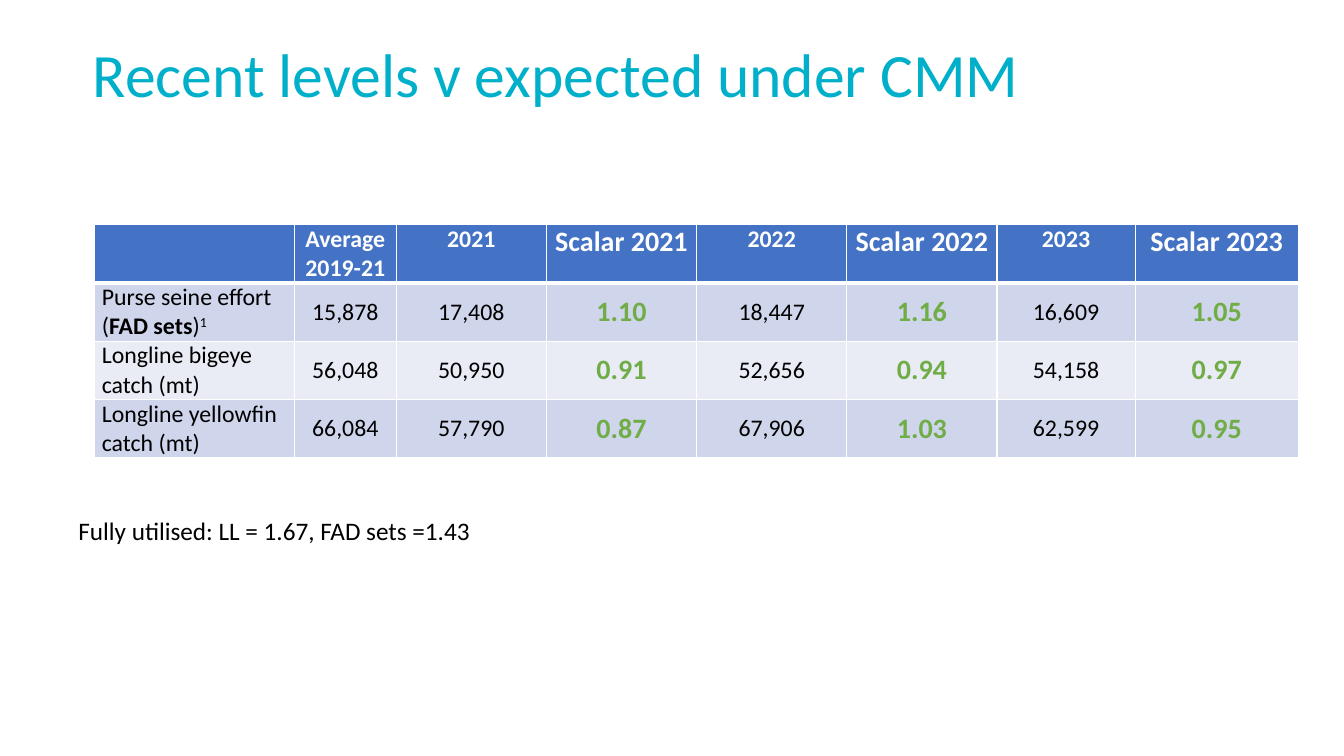
"""Build the slide comparing recent fishing levels with those expected under the CMM."""
from lxml import etree
from pptx import Presentation
from pptx import util as u
from pptx.dml.color import RGBColor
from pptx.enum import text
from pptx.oxml.ns import qn

TITLE = "Recent levels v expected under CMM"
NOTE = "Fully utilised: LL = 1.67, FAD sets =1.43"
HEADER = ["", "Average 2019-21", "2021", "Scalar 2021", "2022", "Scalar 2022", "2023", "Scalar 2023"]
ROWS = [
    [("Purse seine effort (", "FAD sets", ")", "1"),
     "15,878", "17,408", "1.10", "18,447", "1.16", "16,609", "1.05"],
    [("Longline bigeye catch (mt)",),
     "56,048", "50,950", "0.91", "52,656", "0.94", "54,158", "0.97"],
    [("Longline yellowfin catch (mt)",),
     "66,084", "57,790", "0.87", "67,906", "1.03", "62,599", "0.95"],
]
BOLD_PART, SUPERSCRIPT_PART = 1, 3
SCALAR_COLUMNS = (3, 5, 7)
COLUMN_WIDTHS = [1.98, 1.01, 1.49, 1.49, 1.49, 1.49, 1.37, 1.62]
TABLE_LEFT, TABLE_TOP, TABLE_HEIGHT = 0.94, 2.23, 2.27
COLORS = {"title": "00B0CA", "header": "4472C4", "odd": "CFD5EA", "even": "E9EBF5",
          "scalar": "70AD47", "white": "FFFFFF", "black": "000000"}


def style_run(run, size, color, bold=False):
    run.font.name = "Calibri"
    run.font.size = u.Pt(size)
    run.font.bold = bold
    run.font.color.rgb = RGBColor.from_string(COLORS[color])


def add_borders(cell, row):
    properties = cell._tc.get_or_add_tcPr()
    widths = {"lnL": 1, "lnR": 1, "lnT": 3 if row == 1 else 1, "lnB": 3 if row == 0 else 1}
    for side, width in widths.items():
        line = etree.SubElement(properties, qn(f"a:{side}"), w=str(u.Pt(width)))
        fill = etree.SubElement(line, qn("a:solidFill"))
        etree.SubElement(fill, qn("a:srgbClr"), val=COLORS["white"])


def fill_cell(cell, row, column, content):
    is_header, is_scalar = row == 0, column in SCALAR_COLUMNS
    add_borders(cell, row)
    cell.fill.solid()
    fill = "header" if is_header else "odd" if row % 2 else "even"
    cell.fill.fore_color.rgb = RGBColor.from_string(COLORS[fill])
    cell.margin_left = cell.margin_right = u.Inches(0.07)
    cell.margin_top = cell.margin_bottom = 0
    centred = not is_header and column > 0
    cell.vertical_anchor = text.MSO_ANCHOR.MIDDLE if centred else text.MSO_ANCHOR.TOP
    paragraph = cell.text_frame.paragraphs[0]
    paragraph.alignment = text.PP_ALIGN.CENTER if column else text.PP_ALIGN.LEFT
    color = "white" if is_header else "scalar" if is_scalar else "black"
    parts = (content,) if isinstance(content, str) else content
    for index, part in enumerate(parts):
        if not part:
            continue
        run = paragraph.add_run()
        run.text = part
        style_run(run, 20 if is_scalar else 17, color, is_header or is_scalar or index == BOLD_PART)
        if index == SUPERSCRIPT_PART:
            run._r.get_or_add_rPr().set("baseline", "30000")


def add_title(slide):
    title = slide.shapes.title
    title.left, title.top, title.width, title.height = map(u.Inches, (0.82, 0.37, 12.11, 0.8))
    frame = title.text_frame
    frame.text = TITLE
    frame.auto_size = text.MSO_AUTO_SIZE.NONE
    frame.vertical_anchor = text.MSO_ANCHOR.MIDDLE
    paragraph = frame.paragraphs[0]
    paragraph.alignment = text.PP_ALIGN.LEFT
    paragraph.line_spacing = 0.9
    style_run(paragraph.runs[0], 44, "title")


def add_levels_table(slide):
    grid = [HEADER, *ROWS]
    table = slide.shapes.add_table(
        len(grid), len(HEADER), u.Inches(TABLE_LEFT), u.Inches(TABLE_TOP),
        u.Inches(sum(COLUMN_WIDTHS)), u.Inches(TABLE_HEIGHT)).table
    for column, width in zip(table.columns, COLUMN_WIDTHS):
        column.width = u.Inches(width)
    for row, contents in enumerate(grid):
        for column, content in enumerate(contents):
            fill_cell(table.cell(row, column), row, column, content)


def add_note(slide):
    frame = slide.shapes.add_textbox(*map(u.Inches, (0.68, 5.06, 4.13, 0.4))).text_frame
    frame.text = NOTE
    frame.word_wrap = False
    frame.auto_size = text.MSO_AUTO_SIZE.SHAPE_TO_FIT_TEXT
    style_run(frame.paragraphs[0].runs[0], 18, "black")


def main():
    presentation = Presentation()
    presentation.slide_width, presentation.slide_height = u.Inches(13.33), u.Inches(7.5)
    slide = presentation.slides.add_slide(presentation.slide_layouts[5])
    add_title(slide)
    add_levels_table(slide)
    add_note(slide)
    presentation.save("out.pptx")


if __name__ == "__main__":
    main()
